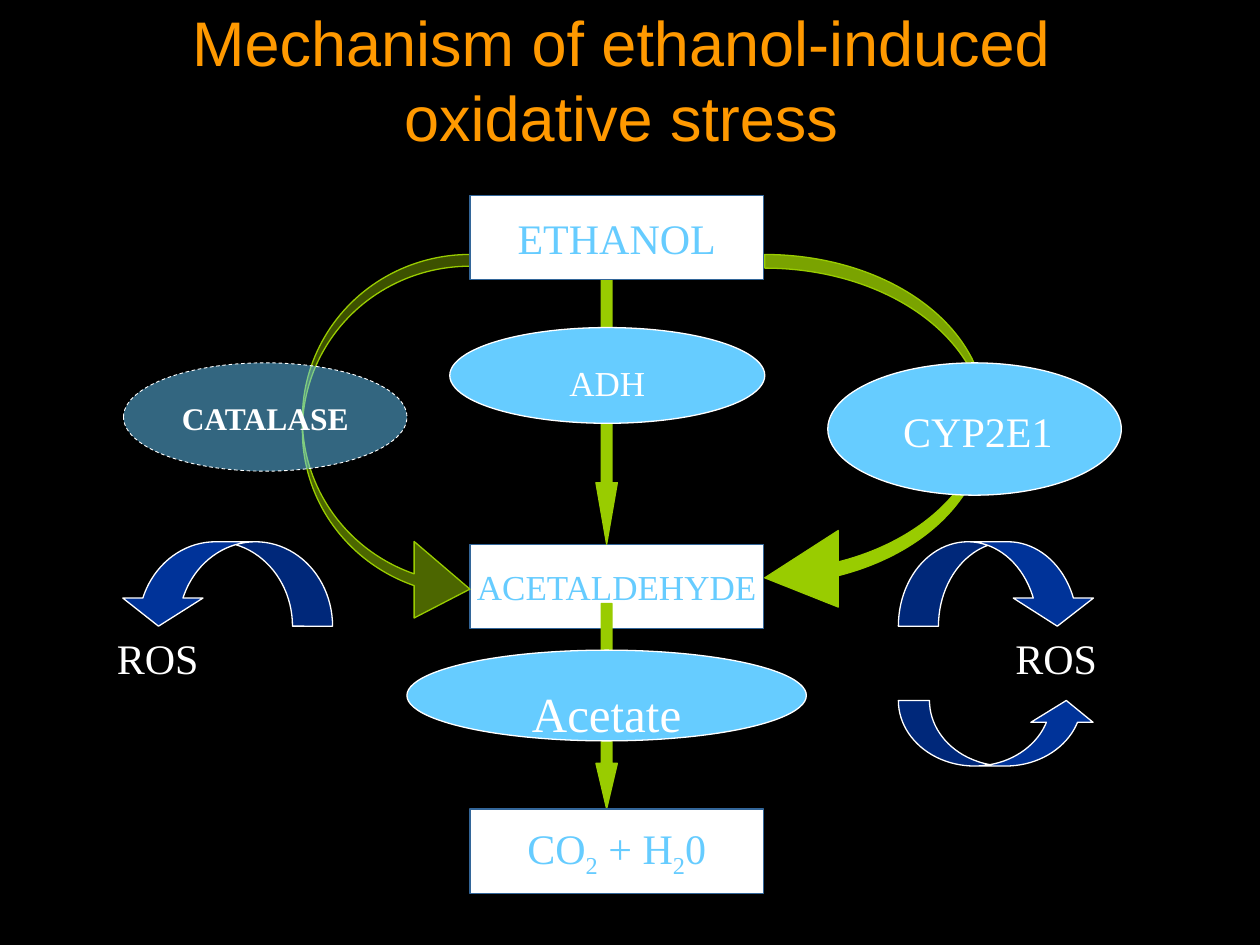
import pptx
import pptx.util
import pptx.dml.color
import pptx.enum.dml
import pptx.enum.shapes
import pptx.enum.text
from lxml import etree

Inches, Pt = pptx.util.Inches, pptx.util.Pt
RGB = pptx.dml.color.RGBColor
MSO = pptx.enum.shapes.MSO_SHAPE
ANCHOR = pptx.enum.text.MSO_ANCHOR
ALIGN = pptx.enum.text.PP_ALIGN

BLACK, WHITE = RGB(0, 0, 0), RGB(255, 255, 255)
ORANGE, SKY = RGB(0xFF, 0x99, 0x00), RGB(0x66, 0xCC, 0xFF)
GREEN, NAVY, STEEL = RGB(0x99, 0xCC, 0), RGB(0, 0x33, 0x99), RGB(0x33, 0x66, 0x99)
SERIF = "Times New Roman"

# Content: runs are (text, is subscript)
TITLE = "Mechanism of ethanol-induced oxidative stress"
ETHANOL = [("ETHANOL", False)]
ACETALDEHYDE = [("ACETALDEHYDE", False)]
PRODUCTS = [("CO", False), ("2", True), (" + H", False), ("2", True), ("0", False)]

# Main column: compounds share one size, shafts share one axis
BOX_X, BOX_W, BOX_H = 3.73, 2.33, 0.67
ETHANOL_Y, ACETALDEHYDE_Y, PRODUCTS_Y = 1.55, 4.32, 6.42
SHAFT_X, SHAFT_W = 4.73, 0.17
ROS_Y, ROS_ARROW_H = 4.97, 0.67

prs = pptx.Presentation()
prs.slide_width, prs.slide_height = Inches(10), Inches(7.5)
slide = prs.slides.add_slide(prs.slide_layouts[6])
slide.background.fill.solid()
slide.background.fill.fore_color.rgb = BLACK


def write(s, runs, size, color, font=SERIF, bold=False, align=ALIGN.CENTER):
    p = s.text_frame.paragraphs[0]
    p.alignment = align
    for text, subscript in runs:
        r = p.add_run()
        r.text = text
        r.font.size, r.font.name, r.font.bold = Pt(size), font, bold
        r.font.color.rgb = color
        if subscript:
            r.font._element.set("baseline", "-25000")


def shape(kind, box, fill, line, adj=(), flip=None, alpha=None):
    s = slide.shapes.add_shape(kind, *map(Inches, box))
    s.shadow.inherit = False
    s.fill.solid()
    s.fill.fore_color.rgb = fill
    s.line.color.rgb, s.line.width = line, Pt(0.75)
    for i, value in enumerate(adj):
        s.adjustments[i] = value
    if flip:
        s._element.spPr.xfrm.set(flip, "1")
    if alpha:
        color = s._element.spPr.find(".//{*}solidFill/{*}srgbClr")
        etree.SubElement(color, pptx.oxml.ns.qn("a:alpha")).set("val", str(alpha * 1000))
    return s


def compound(y, runs, size=24):
    s = shape(MSO.RECTANGLE, (BOX_X, y, BOX_W, BOX_H), WHITE, STEEL)
    s.text_frame.word_wrap = False
    s.text_frame.vertical_anchor = ANCHOR.MIDDLE
    write(s, runs, size, SKY)


def enzyme(box, text=None, size=20, bold=False, alpha=None):
    s = shape(MSO.OVAL, box, SKY, WHITE, alpha=alpha)
    if text:
        tf = s.text_frame
        tf.vertical_anchor = ANCHOR.TOP
        tf.margin_top, tf.margin_bottom = Inches(0.16), 0
        write(s, [(text, False)], size, WHITE, bold=bold)
    return s


def shaft(top, bottom, head):
    shape(MSO.DOWN_ARROW, (SHAFT_X, top, SHAFT_W, bottom - top), GREEN, GREEN, (0.5, head))


def label(box, text):
    s = slide.shapes.add_textbox(*map(Inches, box))
    s.text_frame.word_wrap = False
    write(s, [(text, False)], 24, WHITE, align=ALIGN.LEFT)


def ros_arrow(box, flip=None):
    shape(MSO.CURVED_DOWN_ARROW, box, NAVY, WHITE, (0.475, 0.95, 0.333), flip)


# Title
s = slide.shapes.add_textbox(*map(Inches, (0.43, 0, 9, 1.25)))
s.text_frame.word_wrap = True
s.text_frame.vertical_anchor = ANCHOR.MIDDLE
write(s, [(TITLE, False)], 36, ORANGE, font="Arial")

# Acetaldehyde to products
compound(ACETALDEHYDE_Y, ACETALDEHYDE, 20)
shaft(4.79, PRODUCTS_Y, 2.125)
enzyme((3.23, 5.16, 3.17, 0.72), "Acetate", 28)

# Side routes: catalase on the left, CYP2E1 on the right
shape(MSO.CURVED_RIGHT_ARROW, (2.4, 2.02, 1.33, 2.96), GREEN, GREEN,
      (0.07, 0.457, 0.333), alpha=50)
shape(MSO.CURVED_RIGHT_ARROW, (6.07, 2.02, 1.75, 2.87), GREEN, GREEN,
      (0.062, 0.347, 0.333), "flipH")
enzyme((6.57, 2.88, 2.33, 1.05))
catalase = enzyme((0.98, 2.88, 2.25, 0.86), "CATALASE", 18, True, 50)
catalase.line.width = Pt(0.5)
catalase.line.dash_style = pptx.enum.dml.MSO_LINE.DASH

# Ethanol to acetaldehyde
shaft(2.12, ACETALDEHYDE_Y, 2.875)
enzyme((3.57, 2.6, 2.5, 0.76), "ADH")
compound(ETHANOL_Y, ETHANOL)
compound(PRODUCTS_Y, PRODUCTS)
label((7.07, 3.17, 1.39, 0.57), "CYP2E1")

# Reactive oxygen species on both sides
for arrow_x, arrow_w, text_x, flip in ((7.13, 1.58, 7.96, None), (0.94, 1.7, 0.83, "flipH")):
    ros_arrow((arrow_x, ROS_Y - ROS_ARROW_H, arrow_w, ROS_ARROW_H), flip)
    label((text_x, ROS_Y, 0.86, 0.51), "ROS")
ros_arrow((7.13, 5.56, 1.58, 0.52), "flipV")

prs.save("out.pptx")
